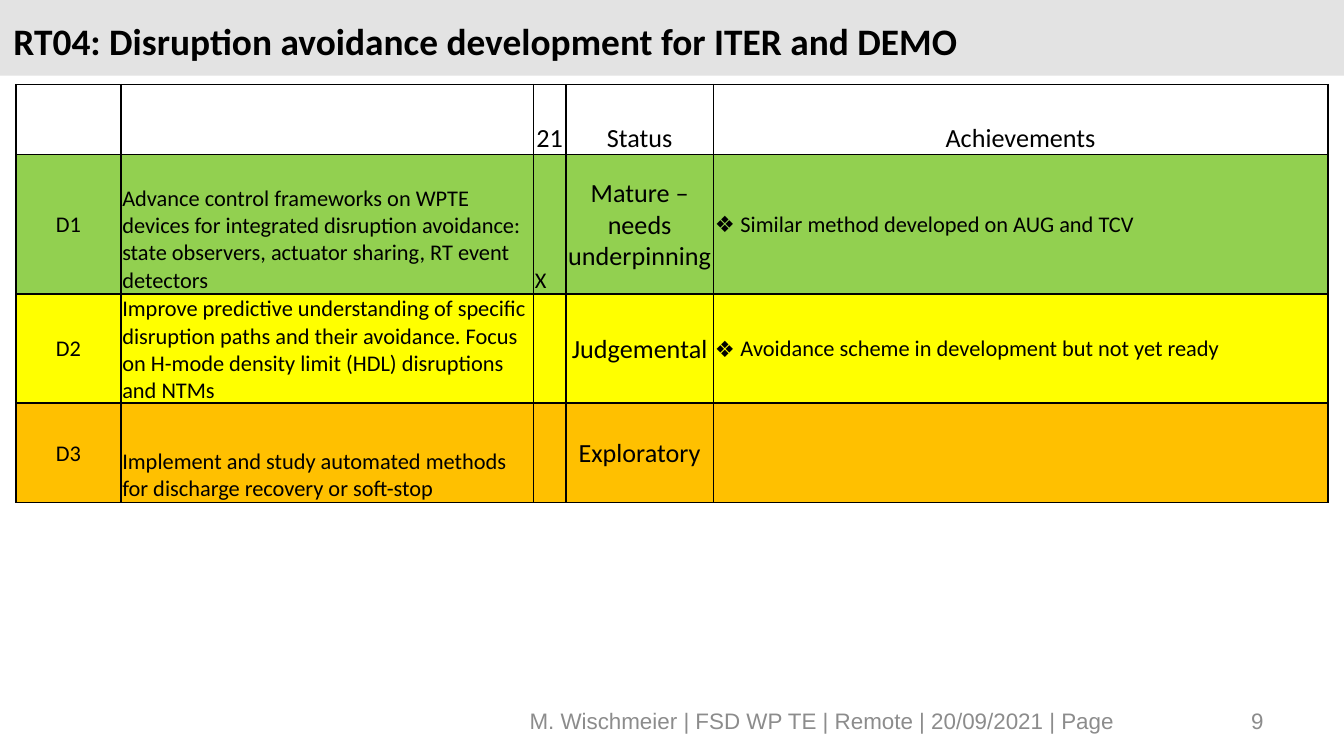
from lxml import etree
from pptx import Presentation
from pptx.dml.color import RGBColor
from pptx.enum.text import MSO_ANCHOR, PP_ALIGN
from pptx.enum.shapes import MSO_SHAPE
from pptx.oxml.ns import qn
from pptx.util import Inches, Pt

LEFT, CENTER, RIGHT = PP_ALIGN.LEFT, PP_ALIGN.CENTER, PP_ALIGN.RIGHT
MIDDLE, BOTTOM = MSO_ANCHOR.MIDDLE, MSO_ANCHOR.BOTTOM
RECTANGLE = MSO_SHAPE.RECTANGLE

THEME = {
    "text": "000000", "band": "E3E3E3", "footer": "8C8C8C",
    "mature": "92D050", "judgemental": "FFFF00", "exploratory": "FFC000",
    "body_font": "Calibri", "footer_font": "Arial",
    "title_size": 20, "label_size": 14, "body_size": 12,
}


def style_text(para, size, align=LEFT, color="text", font="body_font", bold=False):
    para.alignment = align
    for span in para.runs:
        span.font.size = Pt(THEME[size])
        span.font.name = THEME[font]
        span.font.bold = bold
        span.font.color.rgb = RGBColor.from_string(THEME[color])


def add_border(cell):
    properties = cell._tc.get_or_add_tcPr()
    for position, side in enumerate(("lnL", "lnR", "lnT", "lnB")):
        line = etree.Element(qn(f"a:{side}"), w=str(Pt(1)))
        fill = etree.SubElement(line, qn("a:solidFill"))
        etree.SubElement(fill, qn("a:srgbClr"), val=THEME["text"])
        properties.insert(position, line)


# Widescreen page, 16 to 9
deck = Presentation()
deck.slide_width = Inches(10)
deck.slide_height = deck.slide_width * 9 // 16
page = deck.slides.add_slide(deck.slide_layouts[5])

# Header band, a tenth of the page high, behind the title
band = page.shapes.add_shape(RECTANGLE, 0, 0, deck.slide_width, deck.slide_height // 10)
band.shadow.inherit = False
band.fill.solid()
band.fill.fore_color.rgb = RGBColor.from_string(THEME["band"])
band.line.fill.background()
title = page.shapes.title
title._element.addprevious(band._element)

# Title
title.left, title.top, title.width, title.height = 0, Inches(0.06), Inches(9), Inches(0.38)
title.text_frame.text = "RT04: Disruption avoidance development for ITER and DEMO"
title.text_frame.vertical_anchor = MIDDLE
title.text_frame.paragraphs[0].line_spacing = Pt(32)
style_text(title.text_frame.paragraphs[0], "title_size", bold=True)

# Footer and page number
for words, left, width, align in (
    ("M. Wischmeier | FSD WP TE | Remote | 20/09/2021 | Page ", 3.42, 5.44, CENTER),
    ("9", 7.17, 2.33, RIGHT),
):
    box = page.shapes.add_textbox(Inches(left), Inches(5.21), Inches(width), Inches(0.3))
    box.text_frame.word_wrap = True
    box.text_frame.vertical_anchor = MIDDLE
    box.text_frame.text = words
    style_text(box.text_frame.paragraphs[0], "body_size", align, "footer", "footer_font")

# Deliverables table: one fill per row, one text style per column
column_widths = (0.78, 3.07, 0.24, 1.1, 4.57)
row_heights = (0.52, 1.04, 0.78, 0.74)
row_fills = (None, "mature", "judgemental", "exploratory")
column_styles = (
    ("body_size", CENTER, MIDDLE),
    ("body_size", LEFT, BOTTOM),
    ("body_size", LEFT, BOTTOM),
    ("label_size", CENTER, MIDDLE),
    ("body_size", LEFT, MIDDLE),
)
header_style = ("label_size", CENTER, BOTTOM)
rows = (
    ("", "", " 21", "Status", "Achievements"),
    ("D1", "Advance control frameworks on WPTE devices for integrated disruption avoidance: "
     "state observers, actuator sharing, RT event detectors",
     "X", "Mature – needs underpinning", "Similar method developed on AUG and TCV"),
    ("D2", "Improve predictive understanding of specific disruption paths and their avoidance. "
     "Focus on H-mode density limit (HDL) disruptions and NTMs",
     "", "Judgemental", "Avoidance scheme in development but not yet ready"),
    ("D3", "Implement and study automated methods for discharge recovery or soft-stop",
     "", "Exploratory", ""),
)
table = page.shapes.add_table(
    len(rows), len(column_widths), Inches(0.12), Inches(0.63),
    Inches(sum(column_widths)), Inches(sum(row_heights))).table
table.first_row = table.horz_banding = False
for column, width in zip(table.columns, column_widths):
    column.width = Inches(width)

for r, (texts, height, fill) in enumerate(zip(rows, row_heights, row_fills)):
    table.rows[r].height = Inches(height)
    for c, words in enumerate(texts):
        cell = table.cell(r, c)
        size, align, anchor = column_styles[c] if r else header_style
        cell.margin_left = cell.margin_right = cell.margin_top = Inches(0.01)
        cell.margin_bottom = 0
        cell.vertical_anchor = anchor
        if fill:
            cell.fill.solid()
            cell.fill.fore_color.rgb = RGBColor.from_string(THEME[fill])
        else:
            cell.fill.background()
        add_border(cell)
        cell.text_frame.text = words
        para = cell.text_frame.paragraphs[0]
        # Achievements are bulleted
        if r and words and c == len(texts) - 1:
            properties = para._p.get_or_add_pPr()
            properties.set("marL", str(Inches(0.19)))
            properties.set("indent", str(-Inches(0.19)))
            etree.SubElement(properties, qn("a:buFont"), typeface=THEME["footer_font"])
            etree.SubElement(properties, qn("a:buChar"), char="❖")
        style_text(para, size, align)

deck.save("out.pptx")
